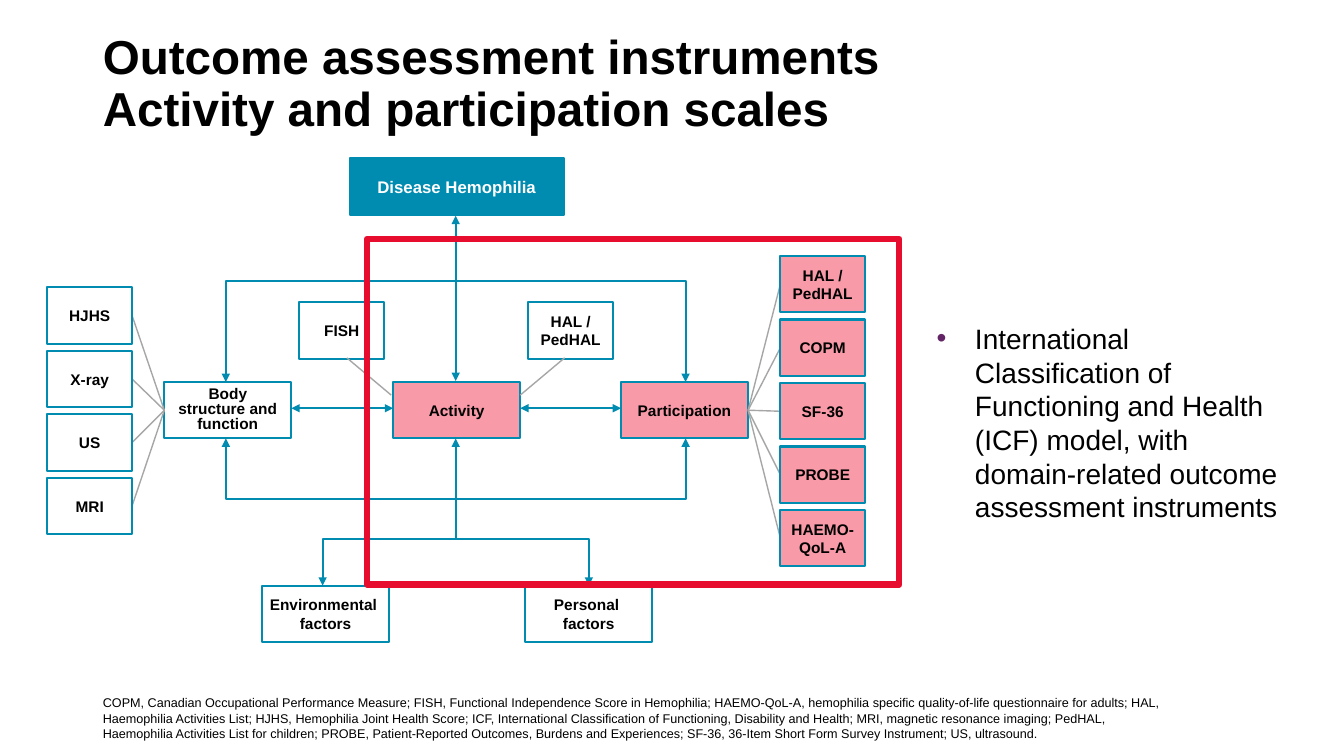
"""Build the slide on outcome scales for activity and participation."""
from dataclasses import dataclass

from lxml.etree import SubElement
from pptx import Presentation
from pptx.dml.color import RGBColor as RGB
from pptx.enum.shapes import MSO_CONNECTOR as Link, MSO_SHAPE as Form
from pptx.enum.text import MSO_ANCHOR as Anchor, MSO_AUTO_SIZE as Fit, PP_ALIGN as Align
from pptx.oxml.ns import qn
from pptx.util import Inches, Pt


@dataclass(frozen=True)
class Theme:
    font: str = "Arial"
    ink: str = "000000"
    white: str = "FFFFFF"
    teal: str = "008BB0"
    pink: str = "F99AA8"
    red: str = "E60D2E"
    gray: str = "A6A6A6"
    plum: str = "642566"
    title: int = 34
    list: int = 20
    head: int = 12
    label: int = 11
    note: int = 9
    edge: float = 1.5
    thin: float = 1
    frame: float = 4.5


class Board:
    def __init__(self, deck, theme):
        self.theme = theme
        self.slide = deck.slides.add_slide(deck.slide_layouts[3])
        self.shapes = self.slide.shapes

    def words(self, para, text, size, color=None, bold=False):
        for i, part in enumerate(text.split("\n")):
            if i:
                para.add_line_break()
            run = para.add_run()
            run.text = part
            font = run.font
            font.name, font.size, font.bold = self.theme.font, Pt(size), bold
            font.color.rgb = RGB.from_string(color or self.theme.ink)

    def holder(self, index, place, text, size, anchor, bold=False, bullet=None, gap=1.0):
        item = self.slide.placeholders[index]
        item.left, item.top, item.width, item.height = map(Inches, place)
        frame = item.text_frame
        frame.word_wrap, frame.auto_size = True, Fit.NONE
        frame.vertical_anchor = anchor
        para = frame.paragraphs[0]
        para.alignment, para.line_spacing = Align.LEFT, gap
        para.space_before = Pt(0)
        self.mark(para, bullet)
        self.words(para, text, size, bold=bold)
        return frame

    def mark(self, para, bullet):
        props = para._p.get_or_add_pPr()
        indent = Inches(0.38) if bullet else 0
        props.set("marL", str(indent))
        props.set("indent", str(-indent))
        if not bullet:
            SubElement(props, qn("a:buNone"))
            return
        tint = SubElement(props, qn("a:buClr"))
        SubElement(tint, qn("a:srgbClr"), val=self.theme.plum)
        SubElement(props, qn("a:buFont"), typeface=self.theme.font)
        SubElement(props, qn("a:buChar"), char=bullet)

    def stroke(self, item, color, width, head=False, tail=False):
        item.line.color.rgb = RGB.from_string(color)
        item.line.width = Pt(width)
        line = item.line._get_or_add_ln()
        for tag, shown in (("a:headEnd", head), ("a:tailEnd", tail)):
            if shown:
                SubElement(line, qn(tag), type="triangle")

    def rect(self, place, fill, color, width):
        item = self.shapes.add_shape(Form.RECTANGLE, *map(Inches, place))
        item.shadow.inherit = False
        if fill:
            item.fill.solid()
            item.fill.fore_color.rgb = RGB.from_string(fill)
        else:
            item.fill.background()
        self.stroke(item, color, width)
        return item

    def box(self, place, text, fill=None, color=None, size=None, gap=1.0, inset=0.1):
        theme = self.theme
        item = self.rect(place, fill or theme.white, theme.teal, theme.edge)
        frame = item.text_frame
        frame.word_wrap, frame.vertical_anchor = True, Anchor.MIDDLE
        frame.margin_left = frame.margin_right = Inches(inset)
        para = frame.paragraphs[0]
        para.alignment, para.line_spacing = Align.CENTER, gap
        self.words(para, text, size or theme.label, color, True)

    def line(self, start, end, color, width, head=False, tail=False):
        item = self.shapes.add_connector(Link.STRAIGHT, *map(Inches, start + end))
        self.stroke(item, color, width, head, tail)
        SubElement(item._element.spPr, qn("a:effectLst"))

    def spoke(self, start, end):
        self.line(start, end, self.theme.gray, self.theme.thin)

    def arrow(self, start, end, tail=True):
        self.line(start, end, self.theme.teal, self.theme.edge, True, tail)

    def elbow(self, *points):
        spots = [(Inches(x), Inches(y)) for x, y in points]
        route = self.shapes.build_freeform(*spots[0])
        route.add_line_segments(spots[1:], close=False)
        item = route.convert_to_shape()
        item.shadow.inherit = False
        item.fill.background()
        self.stroke(item, self.theme.teal, self.theme.edge, tail=True)


def main():
    theme = Theme()
    deck = Presentation()
    deck.slide_width, deck.slide_height = Inches(13.33), Inches(7.5)
    board = Board(deck, theme)

    board.holder(0, (0.92, 0.25, 11.5, 1.19),
                 "Outcome assessment instruments\nActivity and participation scales",
                 theme.title, Anchor.MIDDLE, bold=True, gap=0.9)
    note = board.holder(
        1, (0.92, 6.95, 10.85, 0.4),
        "COPM, Canadian Occupational Performance Measure; FISH, Functional Independence Score in "
        "Hemophilia; HAEMO-QoL-A, hemophilia specific quality-of-life questionnaire for adults; HAL, "
        "Haemophilia Activities List; HJHS, Hemophilia Joint Health Score; ICF, International "
        "Classification of Functioning, Disability and Health; MRI, magnetic resonance imaging; PedHAL, "
        "Haemophilia Activities List for children; PROBE, Patient-Reported Outcomes, Burdens and "
        "Experiences; SF-36, 36-Item Short Form Survey Instrument; US, ultrasound.",
        theme.note, Anchor.BOTTOM)
    note.margin_bottom = 0

    mid, high, wide, small, step = 4.52, 0.56, 1.26, 0.84, 0.63
    row, hub, base = 3.79, 4.07, 5.81
    body, act, part = 1.63, 3.9, 6.16
    tests, scales = 0.47, 7.74

    board.box((3.47, 1.57, 2.12, high), "Disease Hemophilia", theme.teal, theme.white, theme.head)
    board.box((body, row, wide, high), "Body structure and function", gap=0.8)
    board.box((act, row, wide, high), "Activity", theme.pink)
    board.box((part, row, wide, high), "Participation", theme.pink)
    board.box((2.6, base, wide, high), "Environmental \nfactors", inset=0)
    board.box((5.21, base, wide, high), "Personal \nfactors")
    board.box((2.97, 3, small, high), "FISH")
    board.box((5.24, 3, small, high), "HAL / PedHAL")

    board.arrow((mid, 2.14), (mid, 3.78))
    board.arrow((mid, 4.35), (mid, 5.35), tail=False)
    for left, right in ((body, act), (act, part)):
        board.arrow((left + wide, 4.05), (right, 4.05))
    for reach, start, end in ((2.28, 2.79, 3.79), (1.32, 5.35, 5.81), (2.28, 4.95, 4.35)):
        for side in (-reach, reach):
            board.elbow((mid, start), (mid + side, start), (mid + side, end))

    board.spoke((3.44, 3.55), (3.88, 3.92))
    board.spoke((5.6, 3.55), (5.16, 3.92))
    stacks = (
        (tests, 2.85, theme.white, tests + small, body, ("HJHS", "X-ray", "US", "MRI")),
        (scales, 2.54, theme.pink, scales, part + wide,
         ("HAL / PedHAL", "COPM", "SF-36", "PROBE", "HAEMO-QoL-A")),
    )
    for left, top, fill, edge, core, names in stacks:
        for i, name in enumerate(names):
            y = top + i * step
            board.spoke((core, hub), (edge, y + high / 2))
            board.box((left, y, small, high), name, fill)

    board.rect((3.64, 2.37, 5.28, 3.43), None, theme.red, theme.frame)
    board.holder(2, (9.19, 3.14, 3.7, 2.12),
                 "International Classification of Functioning and Health (ICF) model, with "
                 "domain-related outcome assessment instruments",
                 theme.list, Anchor.TOP, bullet="•")
    deck.save("out.pptx")


if __name__ == "__main__":
    main()
